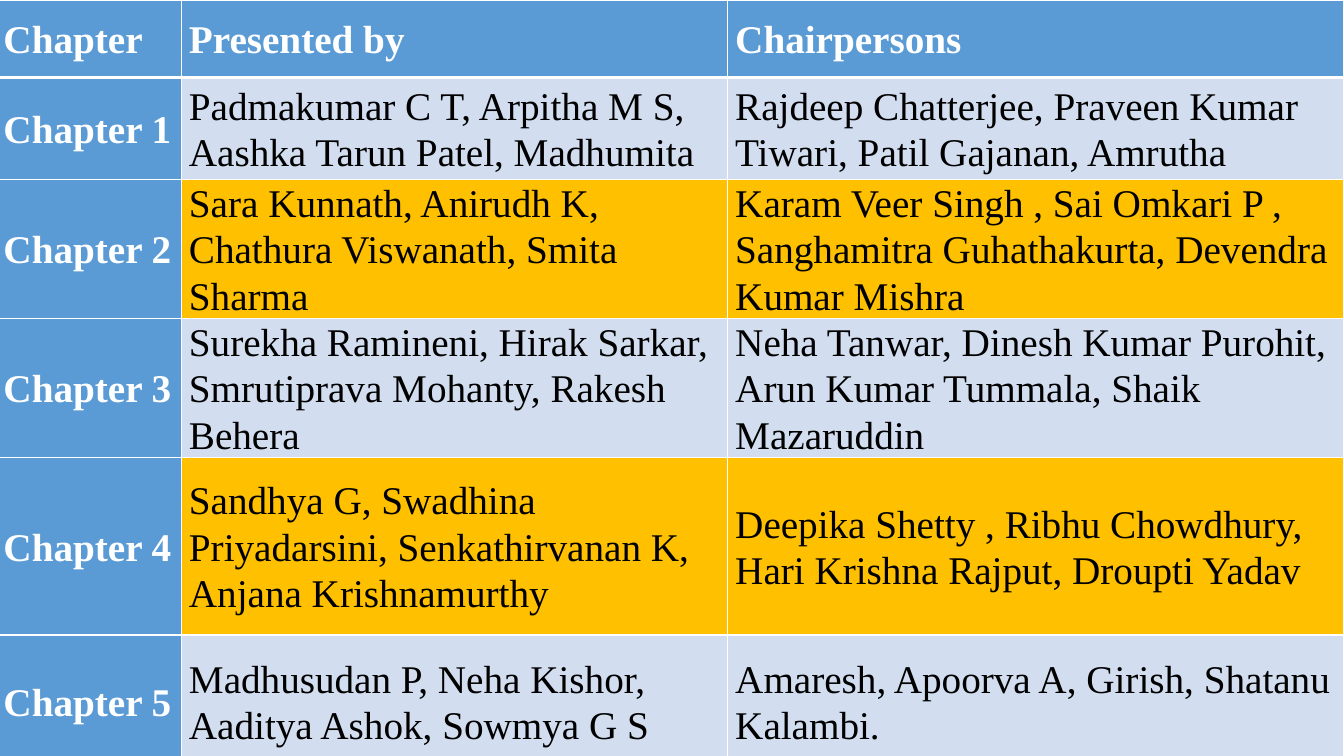
import pptx
import pptx.dml.color
import pptx.enum.text
import pptx.oxml.ns
import pptx.util
from lxml import etree

Pt = pptx.util.Pt
RGBColor = pptx.dml.color.RGBColor

WHITE = RGBColor(0xFF, 0xFF, 0xFF)
BLACK = RGBColor(0x00, 0x00, 0x00)
BLUE = RGBColor(0x5B, 0x9B, 0xD5)
PALE_BLUE = RGBColor(0xD2, 0xDE, 0xEF)
AMBER = RGBColor(0xFF, 0xC0, 0x00)

FONT = "Times New Roman"
COLUMN_WIDTHS = [132.5, 390.2, 439.9]
ROW_HEIGHTS = [55.4, 72.7, 95, 95, 126.7, 95]

HEADINGS = ["Chapter", "Presented by", "Chairpersons"]
CHAPTERS = [
    ("Padmakumar C T, Arpitha M S, Aashka Tarun Patel, Madhumita",
     "Rajdeep Chatterjee, Praveen Kumar Tiwari, Patil Gajanan, Amrutha"),
    ("Sara Kunnath, Anirudh K, Chathura Viswanath, Smita Sharma",
     "Karam Veer Singh , Sai Omkari P , Sanghamitra Guhathakurta, "
     "Devendra Kumar Mishra"),
    ("Surekha Ramineni, Hirak Sarkar, Smrutiprava Mohanty, Rakesh Behera",
     "Neha Tanwar, Dinesh Kumar Purohit, Arun Kumar Tummala, "
     "Shaik Mazaruddin"),
    ("Sandhya G, Swadhina Priyadarsini, Senkathirvanan K, "
     "Anjana Krishnamurthy",
     "Deepika Shetty , Ribhu Chowdhury, Hari Krishna Rajput, Droupti Yadav"),
    ("Madhusudan P, Neha Kishor, Aaditya Ashok, Sowmya G S",
     "Amaresh, Apoorva A, Girish, Shatanu Kalambi."),
]


def add_border(cell, side, width):
    """Draw one white cell border; call before the cell is filled."""
    qn = pptx.oxml.ns.qn
    properties = cell._tc.get_or_add_tcPr()
    line = etree.SubElement(properties, qn("a:" + side), w=str(Pt(width)))
    fill = etree.SubElement(line, qn("a:solidFill"))
    etree.SubElement(fill, qn("a:srgbClr"), val=str(WHITE))


def fill_cell(cell, text, background, is_heading, top_width, bottom_width):
    # Borders and background
    add_border(cell, "lnL", 1)
    add_border(cell, "lnR", 1)
    add_border(cell, "lnT", top_width)
    add_border(cell, "lnB", bottom_width)
    cell.fill.solid()
    cell.fill.fore_color.rgb = background

    # Text position
    cell.margin_left = cell.margin_right = Pt(5.4)
    cell.margin_top = cell.margin_bottom = Pt(0)
    cell.vertical_anchor = pptx.enum.text.MSO_ANCHOR.MIDDLE

    # Text
    paragraph = cell.text_frame.paragraphs[0]
    paragraph.line_spacing = 1.07
    run = paragraph.add_run()
    run.text = text
    run.font.name = FONT
    run.font.size = Pt(28)
    run.font.bold = is_heading
    run.font.color.rgb = WHITE if is_heading else BLACK


def add_chapter_table(slide):
    rows = [HEADINGS]
    for number, names in enumerate(CHAPTERS, start=1):
        rows.append([f"Chapter {number}", *names])

    frame = slide.shapes.add_table(
        len(rows), len(HEADINGS), Pt(-2.9), Pt(0),
        Pt(sum(COLUMN_WIDTHS)), Pt(sum(ROW_HEIGHTS)))
    table = frame.table
    table.horz_banding = False
    for column, width in zip(table.columns, COLUMN_WIDTHS):
        column.width = Pt(width)
    for row, height in zip(table.rows, ROW_HEIGHTS):
        row.height = Pt(height)

    # Blue headings on the top and left, alternating colours elsewhere
    for row_index, texts in enumerate(rows):
        band = PALE_BLUE if row_index % 2 else AMBER
        top_width = 3 if row_index == 1 else 1
        bottom_width = 3 if row_index == 0 else 1
        for column_index, text in enumerate(texts):
            is_heading = row_index == 0 or column_index == 0
            fill_cell(table.cell(row_index, column_index), text,
                      BLUE if is_heading else band, is_heading,
                      top_width, bottom_width)


def main():
    presentation = pptx.Presentation()
    presentation.slide_width = Pt(960)
    presentation.slide_height = Pt(540)
    slide = presentation.slides.add_slide(presentation.slide_layouts[6])
    add_chapter_table(slide)
    presentation.save("out.pptx")


if __name__ == "__main__":
    main()
